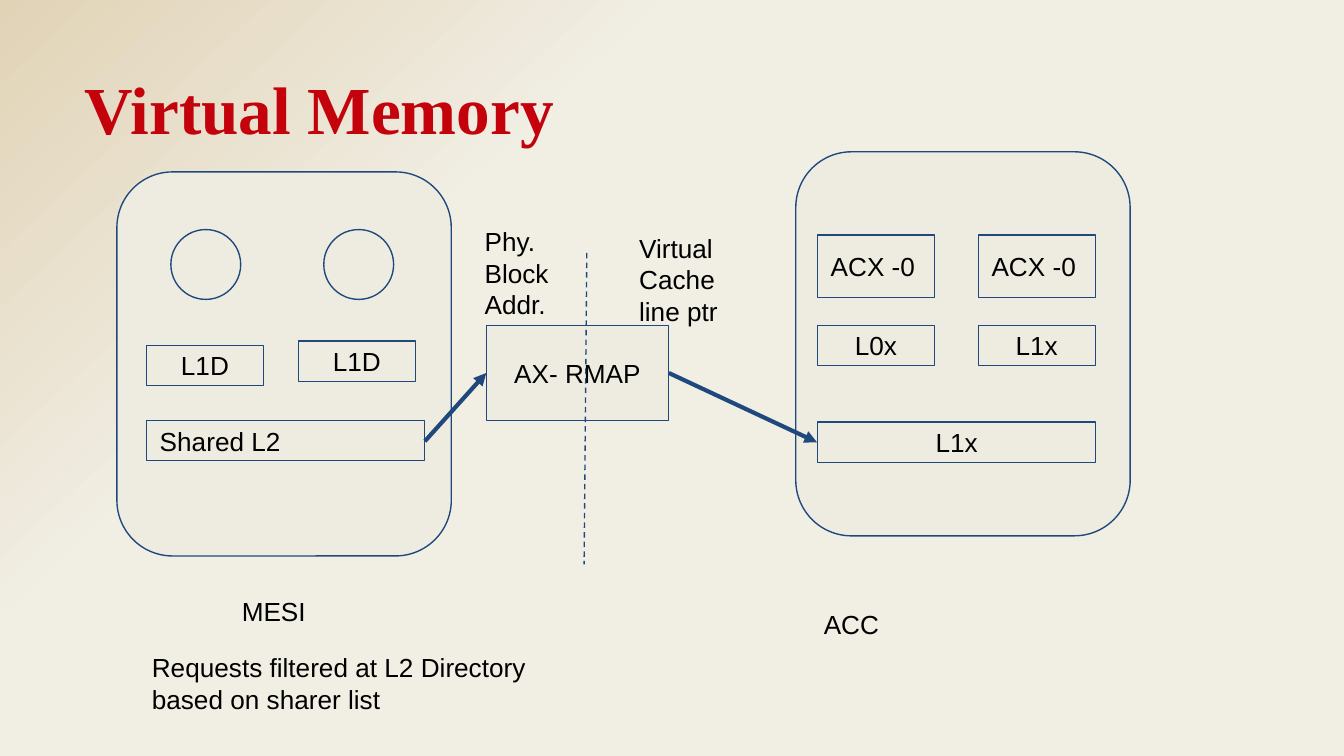
from collections import namedtuple

from lxml import etree
from pptx import Presentation
from pptx import util as u
from pptx.dml.color import RGBColor
from pptx.enum import dml, shapes, text
from pptx.oxml import ns

NAVY = RGBColor(0x1F, 0x49, 0x7D)
CREAM = RGBColor(0xEE, 0xEC, 0xE1)
SAND = RGBColor(0xE1, 0xD3, 0xB6)
IVORY = RGBColor(0xF1, 0xEE, 0xE4)
RED = RGBColor(0xC3, 0x02, 0x0B)
BLACK = RGBColor(0, 0, 0)

RECT = shapes.MSO_SHAPE.RECTANGLE
CIRCLE = shapes.MSO_SHAPE.OVAL
ROUNDED = shapes.MSO_SHAPE.ROUNDED_RECTANGLE
LEFT = text.PP_ALIGN.LEFT
CENTER = text.PP_ALIGN.CENTER
TOP = text.MSO_ANCHOR.TOP
MIDDLE = text.MSO_ANCHOR.MIDDLE

CACHE_W, CACHE_H, SHARED_W = 2.21, 0.76, 5.26

Box = namedtuple("Box", "x y w h")


def inside(box, x, y, w, h):
    """Return a box placed relative to the corner of another box."""
    return Box(box.x + x, box.y + y, w, h)


def write(shape, words, *, size=14, font="Arial", color=BLACK, bold=False,
          align=LEFT, anchor=TOP):
    """Write formatted words into a shape."""
    frame = shape.text_frame
    frame.word_wrap = True
    frame.vertical_anchor = anchor
    frame.margin_left = frame.margin_right = u.Cm(0.25)
    frame.margin_top = frame.margin_bottom = u.Cm(0.25)
    paragraph = frame.paragraphs[0]
    paragraph.alignment = align
    run = paragraph.add_run()
    run.text = words
    run.font.size = u.Pt(size)
    run.font.name = font
    run.font.bold = bold
    run.font.color.rgb = color


def add_label(slide, box, words, **style):
    """Add a free-standing text box."""
    write(slide.shapes.add_textbox(*map(u.Cm, box)), words, **style)


def add_block(slide, box, words="", kind=RECT, align=CENTER):
    """Add an outlined block with an optional caption."""
    block = slide.shapes.add_shape(kind, *map(u.Cm, box))
    block.shadow.inherit = False
    block.fill.solid()
    block.fill.fore_color.rgb = CREAM
    block.line.color.rgb = NAVY
    block.line.width = u.Pt(0.75)
    if words:
        write(block, words, align=align, anchor=MIDDLE)


def add_line(slide, start, end, width=0.75, dashed=False, arrow=False):
    """Add a straight line, dashed or ending in an arrowhead."""
    line = slide.shapes.add_connector(
        shapes.MSO_CONNECTOR.STRAIGHT, *map(u.Cm, (*start, *end)))
    line.line.color.rgb = NAVY
    line.line.width = u.Pt(width)
    if dashed:
        line.line.dash_style = dml.MSO_LINE.DASH
    if arrow:
        etree.SubElement(line.line._get_or_add_ln(), ns.qn("a:tailEnd"),
                         type="triangle")
    etree.SubElement(line._element.spPr, ns.qn("a:effectLst"))


def paint_background(slide):
    """Fill the slide with a diagonal sand-to-ivory gradient."""
    fill = slide.background.fill
    fill.gradient()
    fill.gradient_angle = 313
    for stop, color, position in zip(fill.gradient_stops, (SAND, IVORY), (0, 0.32)):
        stop.color.rgb = color
        stop.position = position


def draw_mesi(slide, box):
    """Draw the processor tile with its cores, caches and protocol name."""
    add_block(slide, box, kind=ROUNDED)
    for x in (1.02, 3.91):
        add_block(slide, inside(box, x, 1.09, 1.32, 1.32), kind=CIRCLE)
    for x, y in ((0.56, 3.28), (3.43, 3.2)):
        add_block(slide, inside(box, x, y, CACHE_W, CACHE_H), "L1D")
    add_block(slide, inside(box, 0.56, 4.7, SHARED_W, CACHE_H), "Shared L2", align=LEFT)
    add_label(slide, inside(box, 2.11, 7.75, 4.88, 1.83), "MESI")


def draw_acc(slide, box):
    """Draw the accelerator tile with its caches and protocol name."""
    add_block(slide, box, kind=ROUNDED)
    for x, cache in ((0.41, "L0x"), (3.45, "L1x")):
        add_block(slide, inside(box, x, 1.57, CACHE_W, 1.19), "ACX -0", align=LEFT)
        add_block(slide, inside(box, x, 3.28, CACHE_W, CACHE_H), cache)
    add_block(slide, inside(box, 0.41, 5.11, SHARED_W, CACHE_H), "L1x")
    add_label(slide, inside(box, 0.28, 8.38, 4.27, 2.03), "ACC")


def draw_rmap(slide, box):
    """Draw the address translator between both tiles."""
    add_block(slide, box, "AX- RMAP")
    add_line(slide, (box.x + 1.9, box.y - 1.37), (box.x + 1.85, box.y + 4.52),
             dashed=True)
    middle, right = box.y + box.h / 2, box.x + box.w
    add_line(slide, (box.x - 1.16, middle + 1.29), (box.x, middle), 2.25, arrow=True)
    add_line(slide, (right, middle), (right + 2.8, middle + 1.31), 2.25, arrow=True)
    add_label(slide, inside(box, -0.28, -2.13, 2.16, 0.76), "Phy. Block Addr.")
    add_label(slide, inside(box, 2.64, -2.01, 2.49, 1.32), "Virtual Cache line ptr")


def main():
    """Build the slide and save it."""
    deck = Presentation()
    deck.slide_width, deck.slide_height = u.Cm(25.4), u.Cm(14.29)
    slide = deck.slides.add_slide(deck.slide_layouts[6])
    paint_background(slide)
    add_label(slide, Box(1.35, 1.02, 19.84, 1.8), "Virtual Memory",
              size=36, font="Times New Roman", color=RED, bold=True)
    draw_mesi(slide, Box(2.21, 3.25, 6.32, 7.26))
    draw_acc(slide, Box(15.04, 2.87, 6.32, 7.26))
    draw_rmap(slide, Box(9.19, 6.15, 3.45, 1.8))
    add_label(slide, Box(2.62, 12.07, 7.98, 1.83),
              "Requests filtered at L2 Directory based on sharer list")
    deck.save("out.pptx")


if __name__ == "__main__":
    main()
